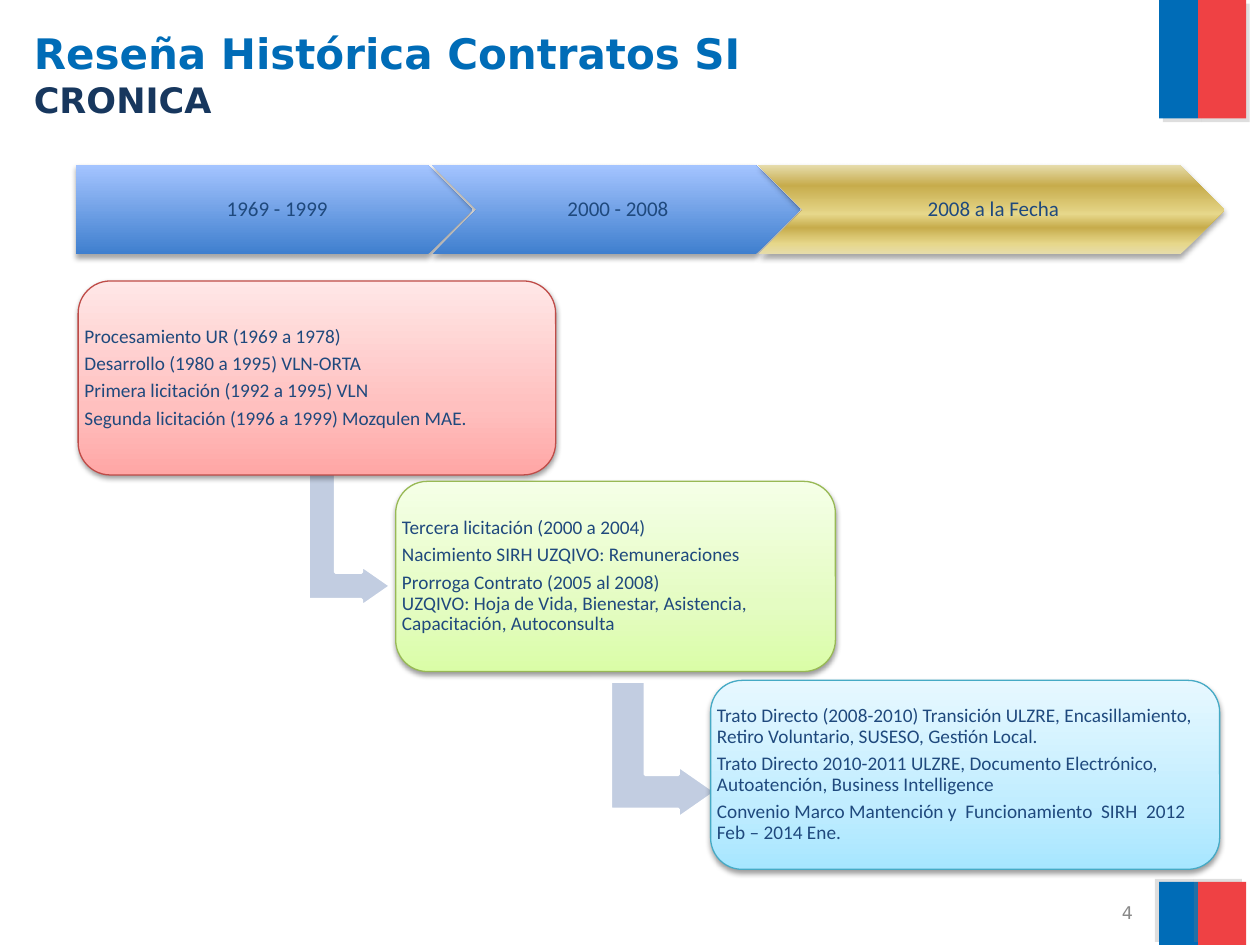
from copy import deepcopy
from typing import NamedTuple, Optional

from lxml.etree import SubElement
from pptx import Presentation
from pptx.dml.color import RGBColor
from pptx.enum.shapes import MSO_SHAPE as Shape
from pptx.enum.text import MSO_ANCHOR as Anchor, PP_ALIGN as Align
from pptx.oxml.ns import qn
from pptx.util import Emu, Pt

EMU_PER_PX = 9144  # 100 px to the inch

WHITE = RGBColor(0xFF, 0xFF, 0xFF)
BLACK = RGBColor(0x00, 0x00, 0x00)
GREY = RGBColor(0x80, 0x80, 0x80)
NUMBER_GREY = RGBColor(0x89, 0x89, 0x89)
FLAG_BLUE = RGBColor(0x00, 0x6C, 0xB7)
FLAG_RED = RGBColor(0xEF, 0x41, 0x44)
NAVY = RGBColor(0x17, 0x37, 0x5E)
TEXT_BLUE = RGBColor(0x1F, 0x49, 0x7D)
ARROW_BLUE = RGBColor(0xC2, 0xCD, 0xE1)
RED_LINE = RGBColor(0xBF, 0x4C, 0x48)
GREEN_LINE = RGBColor(0x98, 0xB9, 0x55)
CYAN_LINE = RGBColor(0x46, 0xAA, 0xC5)
SAND = RGBColor(0xE6, 0xDC, 0xAC)
STRAW = RGBColor(0xE6, 0xD7, 0x8A)
OCHRE = RGBColor(0xC7, 0xAC, 0x4C)

# Gradients run from the bottom to the top: (percent, colour).
BLUE_GRADIENT = ((0, RGBColor(0x3F, 0x7F, 0xCE)), (100, RGBColor(0xA4, 0xC4, 0xFF)))
GOLD_GRADIENT = ((0, SAND), (12, STRAW), (30, OCHRE), (45, STRAW), (77, OCHRE), (100, SAND))
RED_GRADIENT = ((0, RGBColor(0xFF, 0xA6, 0xA5)), (35, RGBColor(0xFF, 0xC0, 0xBF)),
                (100, RGBColor(0xFF, 0xE7, 0xE7)))
GREEN_GRADIENT = ((0, RGBColor(0xDA, 0xFD, 0xA7)), (35, RGBColor(0xE4, 0xFC, 0xC2)),
                  (100, RGBColor(0xF5, 0xFF, 0xE7)))
CYAN_GRADIENT = ((0, RGBColor(0xA7, 0xE6, 0xFF)), (35, RGBColor(0xC1, 0xED, 0xFF)),
                 (100, RGBColor(0xE7, 0xF8, 0xFF)))


class Box(NamedTuple):
    left: int
    top: int
    width: int
    height: int


class Shadow(NamedTuple):
    color: RGBColor
    alpha: int
    blur: float
    distance: float
    angle: int


class Period(NamedTuple):
    label: str
    box: Box
    preset: Shape
    gradient: tuple
    left_inset: int


class Card(NamedTuple):
    box: Box
    gradient: tuple
    border: RGBColor
    lines: tuple


PERIOD_SHADOW = Shadow(BLACK, 35, 3.1, 1.8, 90)
CARD_SHADOW = Shadow(BLACK, 38, 3.1, 1.6, 90)
FLAG_TOP_SHADOW = Shadow(GREY, 25, 0, 3, 45)
FLAG_BOTTOM_SHADOW = Shadow(GREY, 25, 0, 3, 215)

FLAGS = (
    (Box(920, -1, 31, 95), FLAG_BLUE, FLAG_TOP_SHADOW),
    (Box(951, 0, 38, 94), FLAG_RED, FLAG_TOP_SHADOW),
    (Box(920, 700, 31, 50), FLAG_BLUE, FLAG_BOTTOM_SHADOW),
    (Box(951, 700, 38, 50), FLAG_RED, FLAG_BOTTOM_SHADOW),
)
PERIODS = (
    Period("1969 - 1999", Box(60, 131, 315, 71), Shape.PENTAGON, BLUE_GRADIENT, 7),
    Period("2000 - 2008", Box(343, 131, 292, 71), Shape.CHEVRON, BLUE_GRADIENT, 5),
    Period("2008 a la Fecha", Box(602, 131, 370, 71), Shape.CHEVRON, GOLD_GRADIENT, 5),
)
ARROWS = (Box(223, 394, 109, 66), Box(472, 553, 109, 84))
CARDS = (
    Card(Box(62, 223, 379, 154), RED_GRADIENT, RED_LINE, (
        "Procesamiento UR (1969 a 1978)",
        "Desarrollo (1980 a 1995) VLN-ORTA",
        "Primera licitación (1992 a 1995) VLN",
        "Segunda licitación (1996 a 1999) Mozqulen MAE.")),
    Card(Box(314, 382, 349, 151), GREEN_GRADIENT, GREEN_LINE, (
        "Tercera licitación (2000 a 2004)",
        "Nacimiento SIRH UZQIVO: Remuneraciones",
        "Prorroga Contrato (2005 al 2008)\n"
        "UZQIVO: Hoja de Vida, Bienestar, Asistencia, Capacitación, Autoconsulta")),
    Card(Box(564, 540, 404, 150), CYAN_GRADIENT, CYAN_LINE, (
        "Trato Directo (2008-2010) Transición ULZRE, Encasillamiento, "
        "Retiro Voluntario, SUSESO, Gestión Local.",
        "Trato Directo 2010-2011 ULZRE, Documento Electrónico, "
        "Autoatención, Business Intelligence",
        "Convenio Marco Mantención y  Funcionamiento  SIRH  2012 Feb – 2014 Ene.")),
)

TITLE_FONT = {"name": "DejaVu Sans", "size": Pt(24), "bold": True}
SUBTITLE_FONT = TITLE_FONT | {"size": Pt(20)}
NUMBER_FONT = {"name": "DejaVu Sans", "size": Pt(10)}
PERIOD_FONT = {"name": "Calibri", "size": Pt(12)}
CARD_FONT = {"name": "Calibri", "size": Pt(11)}
TIGHT = {"line_spacing": 0.9, "space_after": Pt(3.8)}


def px(value: int) -> Emu:
    return Emu(value * EMU_PER_PX)


def apply_format(target, values: dict) -> None:
    for name, value in values.items():
        setattr(target, name, value)


def add_color(parent, color: RGBColor):
    return SubElement(parent, qn("a:srgbClr"), val=str(color))


def set_gradient(shape, stops: tuple) -> None:
    shape.fill.gradient()
    shape.fill.gradient_angle = 90
    stop_list = shape._element.spPr.find(qn("a:gradFill")).find(qn("a:gsLst"))
    for old_stop in list(stop_list):
        stop_list.remove(old_stop)
    for percent, color in stops:
        add_color(SubElement(stop_list, qn("a:gs"), pos=str(percent * 1000)), color)


def set_shadow(shape, shadow: Shadow) -> None:
    effects = shape._element.spPr.find(qn("a:effectLst"))
    outer = SubElement(effects, qn("a:outerShdw"), blurRad=str(Pt(shadow.blur)),
                       dist=str(Pt(shadow.distance)), dir=str(shadow.angle * 60000),
                       algn="ctr", rotWithShape="0")
    SubElement(add_color(outer, shadow.color), qn("a:alpha"), val=str(shadow.alpha * 1000))


def add_shape(slide, preset: Shape, box: Box, fill, line: Optional[RGBColor] = None,
              line_width: float = 0.75, shadow: Optional[Shadow] = None):
    """Add a preset shape; fill is one colour or a tuple of gradient stops."""
    shape = slide.shapes.add_shape(preset, *map(px, box))
    shape.shadow.inherit = False
    if isinstance(fill, RGBColor):
        shape.fill.solid()
        shape.fill.fore_color.rgb = fill
    else:
        set_gradient(shape, fill)
    if line is None:
        shape.line.fill.background()
    else:
        shape.line.color.rgb = line
        shape.line.width = Pt(line_width)
    if shadow:
        set_shadow(shape, shadow)
    return shape


def add_text(slide, box: Box, lines: tuple, insets: tuple, anchor: Anchor = Anchor.MIDDLE,
             **paragraph_format) -> None:
    """Add a text box; each line is (text, font values, colour)."""
    frame = slide.shapes.add_textbox(*map(px, box)).text_frame
    sides = ("margin_left", "margin_top", "margin_right", "margin_bottom")
    apply_format(frame, {"word_wrap": True, "vertical_anchor": anchor}
                 | dict(zip(sides, map(px, insets))))
    for index, (text, font, color) in enumerate(lines):
        paragraph = frame.add_paragraph() if index else frame.paragraphs[0]
        paragraph.text = text
        apply_format(paragraph, paragraph_format)
        for run in paragraph.runs:
            apply_format(run.font, font)
            run.font.color.rgb = color
        for line_break in paragraph._p.findall(qn("a:br")):
            line_break.append(deepcopy(paragraph.runs[0]._r.rPr))


def main() -> None:
    presentation = Presentation()
    presentation.slide_width, presentation.slide_height = px(1000), px(750)
    slide = presentation.slides.add_slide(presentation.slide_layouts[6])

    for box, color, shadow in FLAGS:
        add_shape(slide, Shape.RECTANGLE, box, color, shadow=shadow)
    add_text(slide, Box(17, 17, 893, 59),
             (("Reseña Histórica Contratos SI", TITLE_FONT, FLAG_BLUE),
              ("CRONICA", SUBTITLE_FONT, NAVY)), (10, 5, 10, 5), Anchor.TOP)
    add_text(slide, Box(676, 714, 233, 21), (("4", NUMBER_FONT, NUMBER_GREY),),
             (10, 5, 10, 5), alignment=Align.RIGHT)

    for period in PERIODS:
        add_shape(slide, period.preset, period.box, period.gradient, shadow=PERIOD_SHADOW)
        add_text(slide, period.box, ((period.label, PERIOD_FONT, TEXT_BLUE),),
                 (period.left_inset, 4, 2, 4), alignment=Align.CENTER, **TIGHT)

    for box in ARROWS:
        arrow = add_shape(slide, Shape.BENT_UP_ARROW, box, ARROW_BLUE, WHITE, 2)
        arrow.rotation = 90
        for index, value in enumerate((0.33, 0.25, 0.36)):
            arrow.adjustments[index] = value
    for card in CARDS:
        add_shape(slide, Shape.ROUNDED_RECTANGLE, card.box, card.gradient, card.border,
                  shadow=CARD_SHADOW)
        add_text(slide, card.box, tuple((line, CARD_FONT, TEXT_BLUE) for line in card.lines),
                 (5, 5, 5, 5), **TIGHT)

    presentation.save("out.pptx")


if __name__ == "__main__":
    main()
